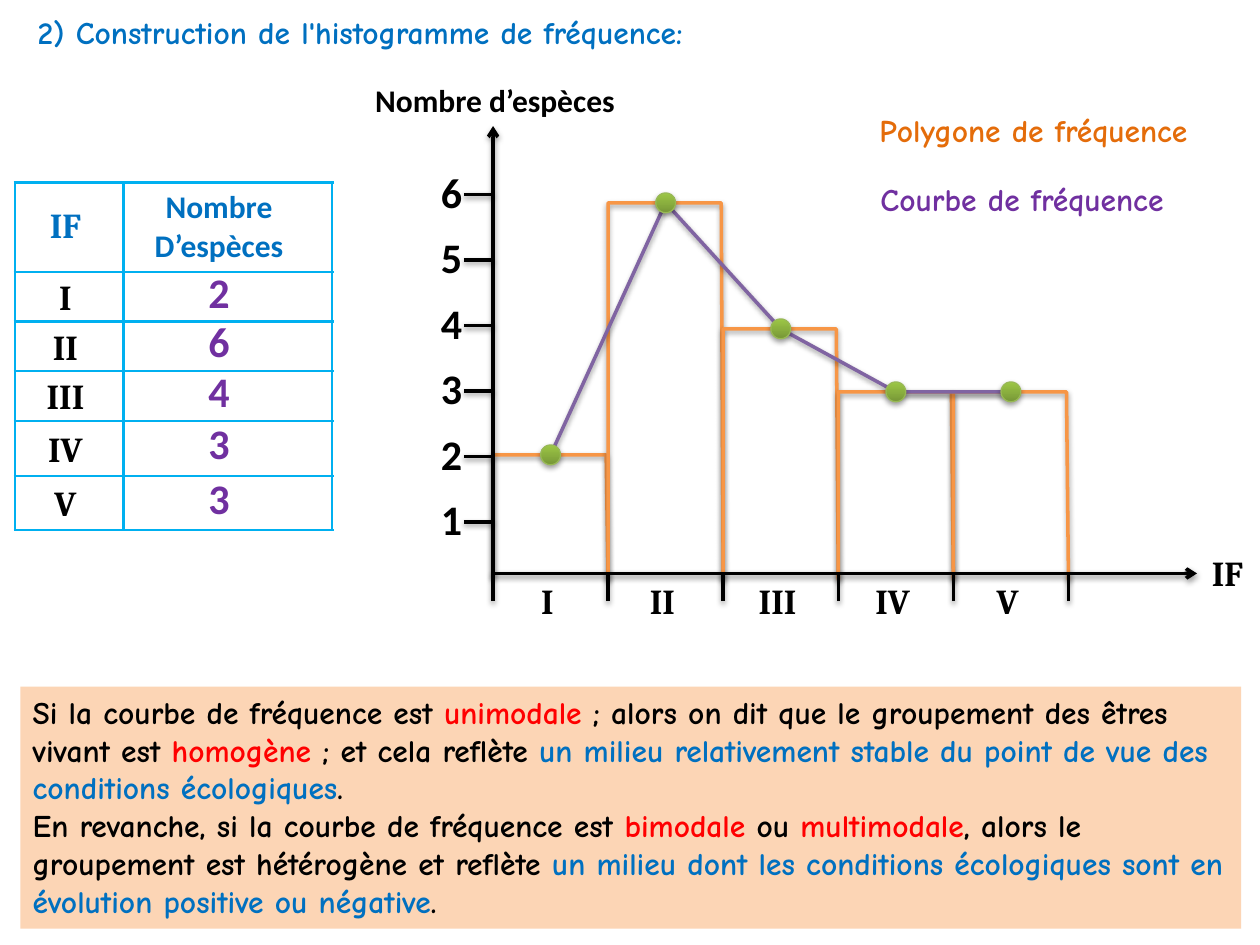
"""Build the slide on the frequency histogram and its curve."""
from lxml import etree
from pptx import Presentation
from pptx import util as u
from pptx.dml import color as col
from pptx.enum import shapes as sh, text as tx
from pptx.oxml import ns, parse_xml

Cm, Pt = u.Cm, u.Pt
hues = {
    "black": "000000", "blue": "0070C0", "sky": "00B0F0", "violet": "7030A0",
    "orange": "E46C0A", "bar": "F79646", "curve": "8064A2", "red": "FF0000",
    "peach": "FCD5B5", "dark": "779737", "light": "9DC746", "rim": "98B955",
}
rgb = {name: col.RGBColor.from_string(code) for name, code in hues.items()}
mid = tx.PP_ALIGN.CENTER


def write(frame, paras, face, size, align=None):
    """Fill a frame with paragraphs made of (text, colour) runs."""
    for n, runs in enumerate(paras):
        para = frame.paragraphs[0] if n == 0 else frame.add_paragraph()
        para.alignment = align
        for words, hue in runs:
            run = para.add_run()
            run.text = words
            run.font.name, run.font.size, run.font.bold = face, Pt(size), True
            run.font.color.rgb = rgb[hue]


def trace(item, hue, width=2):
    """Give an item its line and a soft drop shadow."""
    item.line.color.rgb = rgb[hue]
    item.line.width = Pt(width)
    item._element.spPr.append(parse_xml(
        f'<a:effectLst {ns.nsdecls("a")}><a:outerShdw blurRad="40000" '
        'dist="20000" dir="5400000" rotWithShape="0"><a:srgbClr val="000000">'
        '<a:alpha val="38000"/></a:srgbClr></a:outerShdw></a:effectLst>'))


deck = Presentation()
deck.slide_width, deck.slide_height = Cm(25.4), Cm(19.05)
items = deck.slides.add_slide(deck.slide_layouts[6]).shapes

ranks = ["I", "II", "III", "IV", "V"]
counts = [2, 6, 4, 3, 3]

rows = [1.8, 1, 1, 1, 1.12, 1.08]
cols = [2.19, 4.21]
grid = items.add_table(6, 2, Cm(0.3), Cm(3.68), Cm(sum(cols)), Cm(sum(rows))).table
grid.first_row = grid.horz_banding = False
for n, wide in enumerate(cols):
    grid.columns[n].width = Cm(wide)
for n, high in enumerate(rows):
    grid.rows[n].height = Cm(high)
    for k in range(2):
        cell = grid.cell(n, k)
        cell.margin_left = cell.margin_top = cell.margin_bottom = 0
        cell.margin_right = Cm([0.15, 0.36][k])
        cell.vertical_anchor = tx.MSO_ANCHOR.MIDDLE
        props = cell._tc.get_or_add_tcPr()
        for side in ("lnL", "lnR", "lnT", "lnB"):
            edge = etree.SubElement(props, ns.qn(f"a:{side}"), w=str(Pt(1.5)))
            paint = etree.SubElement(edge, ns.qn("a:solidFill"))
            etree.SubElement(paint, ns.qn("a:srgbClr"), val=hues["sky"])
        cell.fill.background()
        frame = cell.text_frame
        if n == 0:
            paras = [[[("IF", "blue")]],
                     [[("Nombre", "blue")], [("D’espèces", "blue")]]][k]
            write(frame, paras, ["Cambria", "Calibri"][k], [20, 18][k], mid)
        else:
            run = [(ranks[n - 1], "black"), (str(counts[n - 1]), "violet")][k]
            write(frame, [[run]], ["Cambria", "Calibri"][k], [20, 24][k], mid)
            frame.paragraphs[0].line_spacing = Pt(26)

left, base, step = 9.94, 11.56, 2.32
tops = [4.09 + 1.27 * (6 - count) for count in counts]
spots = [(left + step * (n + 0.5), top) for n, top in enumerate(tops)]

paths = []
for n, top in enumerate(tops):
    x = left + step * n
    paths.append(("bar", [(x, 11.65), (x, top), (x + 2.28, top), (x + step, 11.7)]))

lines = [(left, base, left, 2.54, True), (left, base, 24.13, base, True)]
lines += [(left + step * n, 12.12, left + step * n, base, False) for n in range(6)]
lines += [(9.35, 10.52 - 1.32 * n, left, 10.52 - 1.32 * n, False) for n in range(6)]

paths.append(("curve", spots))
for hue, spot in paths:
    if hue == "curve":
        for x, y, far, low, arrow in lines:
            line = items.add_connector(
                sh.MSO_CONNECTOR.STRAIGHT, Cm(x), Cm(y), Cm(far), Cm(low))
            trace(line, "black")
            if arrow:
                etree.SubElement(line.line._get_or_add_ln(), ns.qn("a:tailEnd"), type="arrow")
    points = [(Cm(x), Cm(y)) for x, y in spot]
    pen = items.build_freeform(*points[0])
    pen.add_line_segments(points[1:], close=False)
    shape = pen.convert_to_shape()
    shape.fill.background()
    trace(shape, hue)

for x, y in spots:
    dot = items.add_shape(sh.MSO_SHAPE.OVAL, Cm(x - 0.2), Cm(y - 0.2), Cm(0.4), Cm(0.4))
    dot.fill.gradient()
    dot.fill.gradient_angle = 90
    for stop, hue in zip(dot.fill.gradient_stops, ("dark", "light")):
        stop.color.rgb = rgb[hue]
    trace(dot, "rim", 0.75)

labels = [
    (7.29, 1.5, 5.38, 1.02, "Nombre d’espèces", "Calibri", 18, "black", mid),
    (24.18, 11, 1.14, 1.12, "IF", "Cambria", 20, "black", None),
    (0.51, 0.13, 15.44, 1.02, "2) Construction de l'histogramme de fréquence:",
     "Comic Neue", 18, "blue", None),
    (17.48, 2.11, 7.44, 1.02, "Polygone de fréquence", "Comic Neue", 18, "orange", None),
    (17.5, 3.51, 6.96, 1.02, "Courbe de fréquence", "Comic Neue", 18, "violet", None),
]
labels += [(8.64, 9.83 - 1.32 * n, 0.94, 1.27, str(n + 1), "Calibri", 24, "black", None)
           for n in range(6)]
labels += [(x - 0.7, base, 1.27, 1.12, rank, "Cambria", 20, "black", mid)
           for (x, y), rank in zip(spots, ranks)]
for x, y, wide, high, words, face, size, hue, align in labels:
    frame = items.add_textbox(Cm(x), Cm(y), Cm(wide), Cm(high)).text_frame
    frame.word_wrap = False
    write(frame, [[(words, hue)]], face, size, align)

note = items.add_shape(sh.MSO_SHAPE.RECTANGLE, Cm(0.41), Cm(13.84), Cm(24.61), Cm(4.88))
note.shadow.inherit = False
note.fill.solid()
note.fill.fore_color.rgb = rgb["peach"]
note.line.fill.background()
note.text_frame.word_wrap = True
note.text_frame.vertical_anchor = tx.MSO_ANCHOR.TOP
write(note.text_frame, [
    [("Si la courbe de fréquence est ", "black"), ("unimodale", "red"),
     (" ; alors on dit que le groupement des êtres vivant est ", "black"),
     ("homogène", "red"), (" ; et cela reflète ", "black"),
     ("un milieu relativement stable du point de vue des conditions écologiques", "blue"),
     (".", "black")],
    [("En revanche, si la courbe de fréquence est ", "black"), ("bimodale", "red"),
     (" ou ", "black"), ("multimodale", "red"),
     (", alors le groupement est hétérogène et reflète ", "black"),
     ("un milieu dont les conditions écologiques sont en évolution positive ou négative",
      "blue"), (".", "black")],
], "Comic Neue", 18, tx.PP_ALIGN.LEFT)

deck.save("out.pptx")
